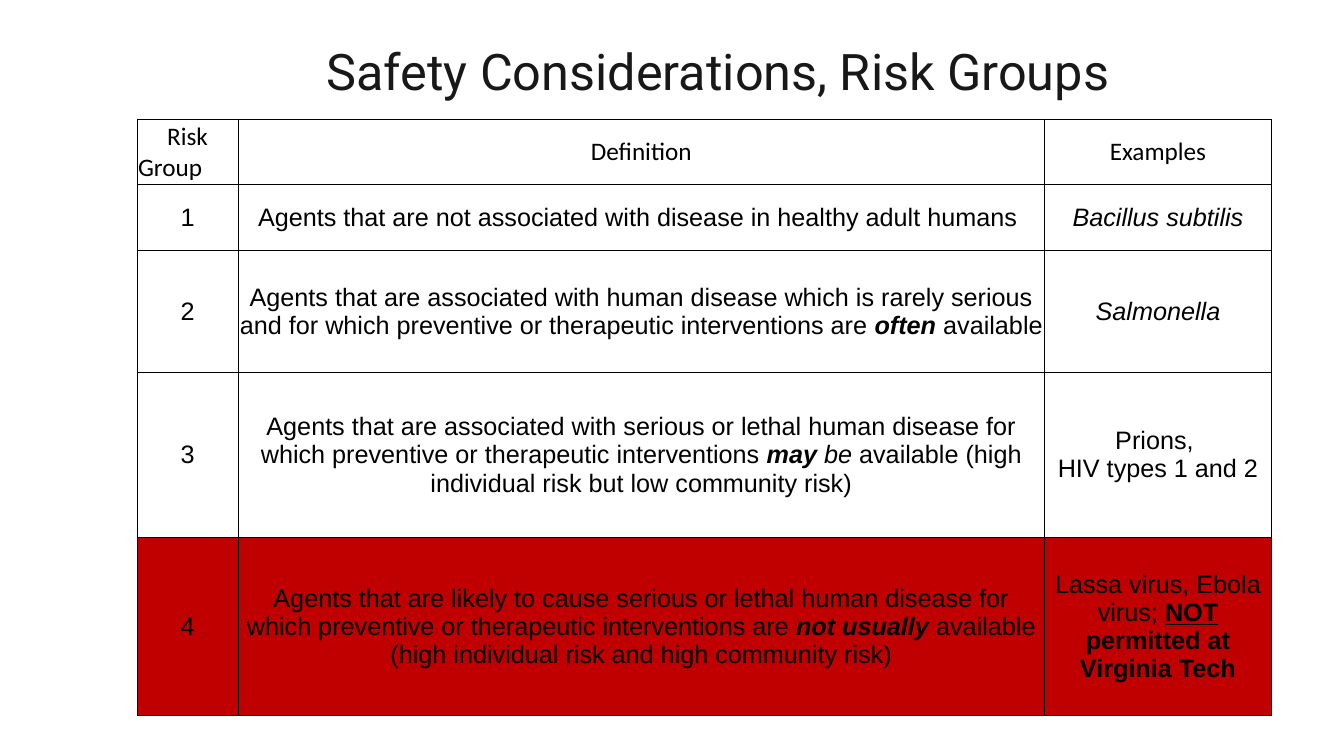
from lxml import etree
from pptx import Presentation
from pptx.dml.color import RGBColor
from pptx.enum.text import MSO_ANCHOR, MSO_AUTO_SIZE, PP_ALIGN
from pptx.oxml.ns import qn
from pptx.util import Inches, Pt

CENTER, LEFT = PP_ALIGN.CENTER, PP_ALIGN.LEFT
MIDDLE, TOP = MSO_ANCHOR.MIDDLE, MSO_ANCHOR.TOP
NO_FIT = MSO_AUTO_SIZE.NONE

COLORS = {"title": "181818", "text": "000000", "line": "000000",
          "plain": "FFFFFF", "alert": "C00000"}
TITLE = {"name": "Roboto", "size": Pt(36)}
HEAD = {"name": "Calibri", "size": Pt(18), "bold": False}
BODY = {**HEAD, "name": "Arial"}
ITALIC = {"italic": True}
STRONG = {"bold": True}
STRESS = {**STRONG, **ITALIC}
UNDER = {**STRONG, "underline": True}

COLS = [1, 8, 2.25]
HEIGHTS = [0.65, 0.65, 1.21, 1.64, 1.77]
ROWS = [
    [[[("Risk", {})], [("Group", {})]], [[("Definition", {})]],
     [[("Examples", {})]]],
    [[[("1", {})]],
     [[("Agents that are not associated with disease in healthy adult humans ", {})]],
     [[("Bacillus subtilis", ITALIC)]]],
    [[[("2", {})]],
     [[("Agents that are associated with human disease which is rarely serious "
        "and for which preventive or therapeutic interventions are ", {}),
       ("often", STRESS), (" available", {})]],
     [[("Salmonella", ITALIC)]]],
    [[[("3", {})]],
     [[("Agents that are associated with serious or lethal human disease for "
        "which preventive or therapeutic interventions ", {}),
       ("may", STRESS), (" be", ITALIC),
       (" available (high individual risk but low community risk)", {})]],
     [[("Prions, ", {})], [("HIV types 1 and 2", {})]]],
    [[[("4", {})]],
     [[("Agents that are likely to cause serious or lethal human disease for "
        "which preventive or therapeutic interventions are ", {}),
       ("not usually", STRESS),
       (" available (high individual risk and high community risk)", {})]],
     [[("Lassa virus, Ebola virus; ", {}), ("NOT", UNDER),
       (" permitted at Virginia Tech", STRONG)]]],
]


def apply(item, values):
    """Set each named value on the item."""
    for name, value in values.items():
        setattr(item, name, value)


class Deck:
    """Holds the style and the current slide, and adds elements to it."""

    def __init__(self, colors):
        self.colors = {key: RGBColor.from_string(code) for key, code in colors.items()}
        self.show = Presentation()
        apply(self.show, {"slide_width": Inches(13.33), "slide_height": Inches(7.5)})
        self.slide = self.show.slides.add_slide(self.show.slide_layouts[5])

    def text(self, frame, paras, style, color):
        """Fill a text frame with centred paragraphs of styled runs."""
        for index, runs in enumerate(paras):
            para = frame.paragraphs[0] if index == 0 else frame.add_paragraph()
            para.alignment = CENTER
            for words, extra in runs:
                run = para.add_run()
                run.text = words
                apply(run.font, {**style, **extra})
                run.font.color.rgb = self.colors[color]

    def title(self, words, left, top, width, height):
        """Place and format the title."""
        shape = self.slide.shapes.title
        apply(shape, {"left": Inches(left), "top": Inches(top),
                      "width": Inches(width), "height": Inches(height)})
        frame = shape.text_frame
        apply(frame, {"margin_left": 0, "margin_right": 0, "margin_top": 0,
                      "margin_bottom": 0, "word_wrap": True,
                      "auto_size": NO_FIT, "vertical_anchor": TOP})
        self.text(frame, [[(words, {})]], TITLE, "title")
        frame.paragraphs[0].line_spacing = Pt(44)

    def border(self, cell):
        """Draw a thin line on each side of a cell."""
        props = cell._tc.get_or_add_tcPr()
        for side in ("a:lnL", "a:lnR", "a:lnT", "a:lnB"):
            line = etree.SubElement(props, qn(side), w=str(Pt(0.5)))
            fill = etree.SubElement(line, qn("a:solidFill"))
            etree.SubElement(fill, qn("a:srgbClr"), val=str(self.colors["line"]))

    def table(self, left, top, rows, cols, heights):
        """Add the table with its last row in the alert colour."""
        table = self.slide.shapes.add_table(
            len(rows), len(cols), Inches(left), Inches(top),
            Inches(sum(cols)), Inches(sum(heights))).table
        apply(table, {"first_row": False, "horz_banding": False})
        for col, width in zip(table.columns, cols):
            col.width = Inches(width)
        for index, (row, height) in enumerate(zip(table.rows, heights)):
            row.height = Inches(height)
            style = BODY if index else HEAD
            tone = "alert" if index == len(rows) - 1 else "plain"
            for cell, paras in zip(row.cells, rows[index]):
                apply(cell, {"margin_left": Inches(0.01), "margin_right": Inches(0.01),
                             "margin_top": Inches(0.01), "margin_bottom": 0,
                             "vertical_anchor": MIDDLE})
                self.border(cell)
                cell.fill.solid()
                cell.fill.fore_color.rgb = self.colors[tone]
                self.text(cell.text_frame, paras, style, "text")
        return table


def main():
    """Build and save the slide."""
    deck = Deck(COLORS)
    deck.title("Safety Considerations, Risk Groups", 0.94, 0.39, 12.36, 0.46)
    table = deck.table(1.36, 1.18, ROWS, COLS, HEIGHTS)
    table.cell(0, 0).text_frame.paragraphs[1].alignment = LEFT
    deck.show.save("out.pptx")


if __name__ == "__main__":
    main()
